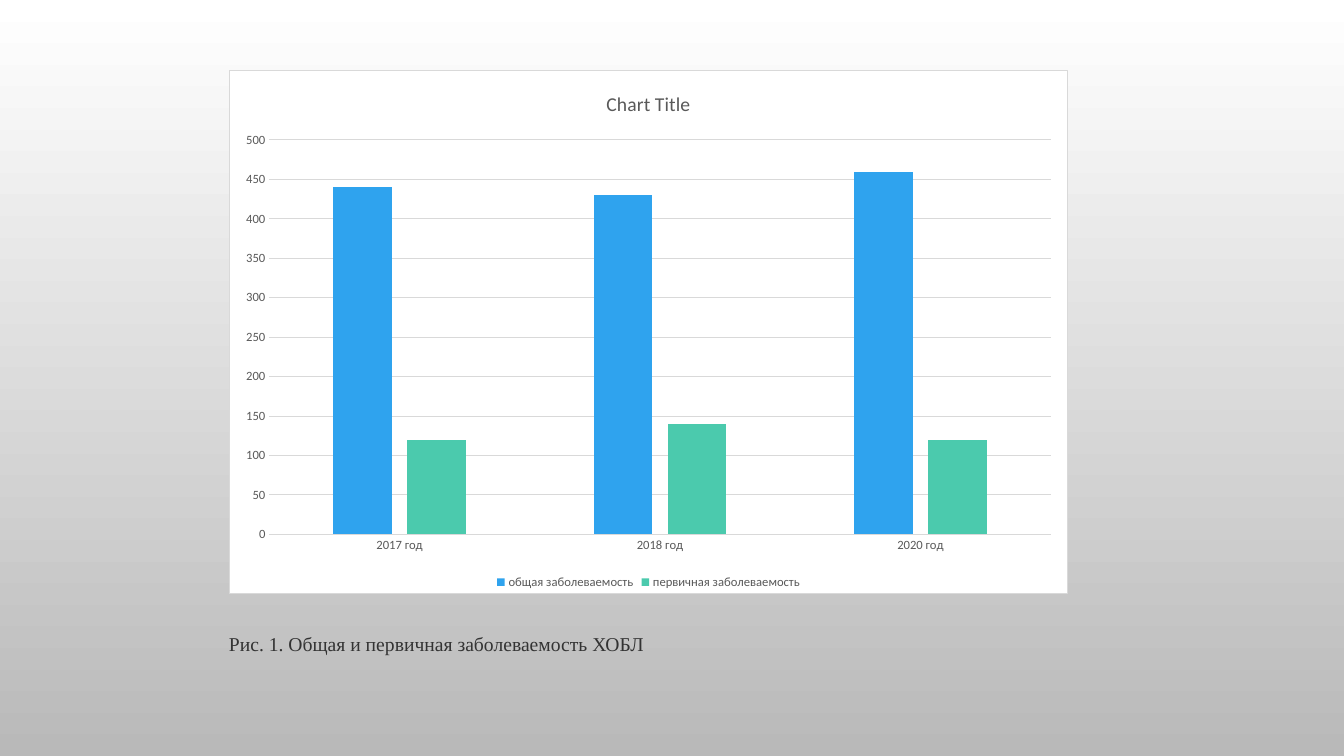
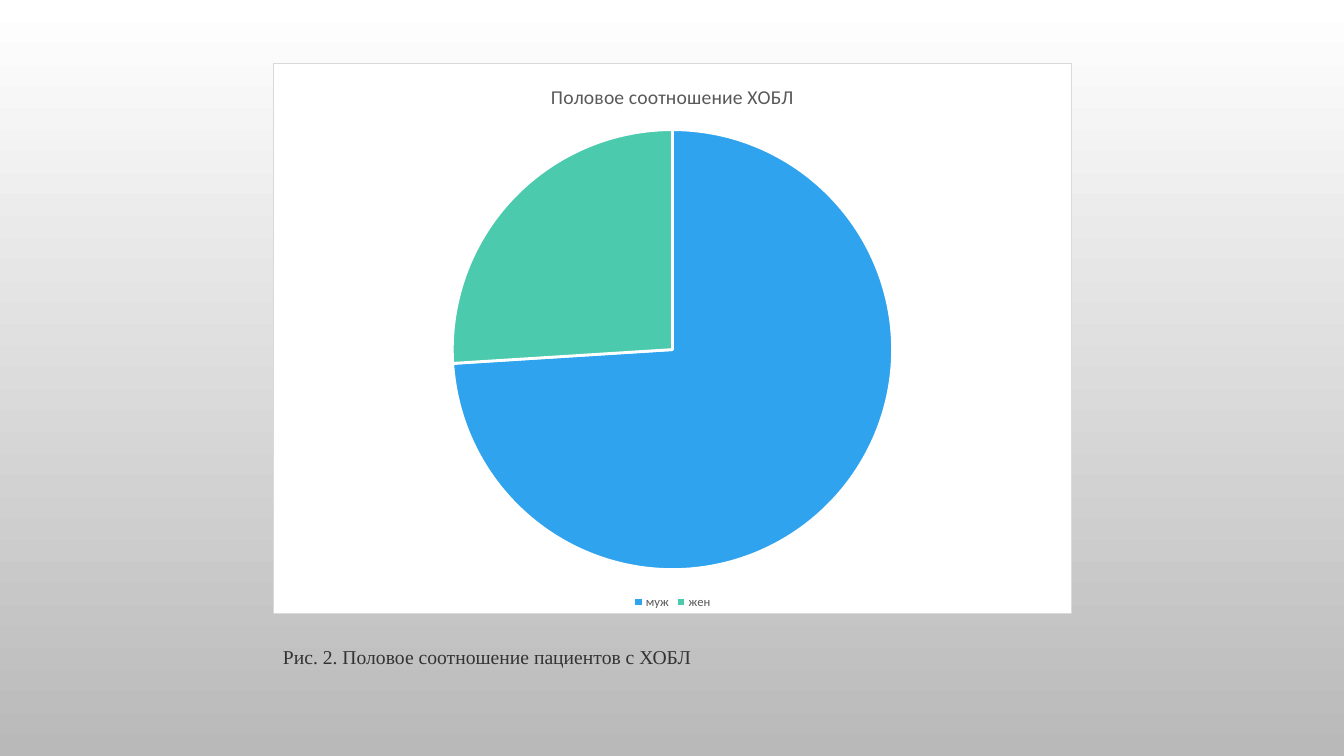
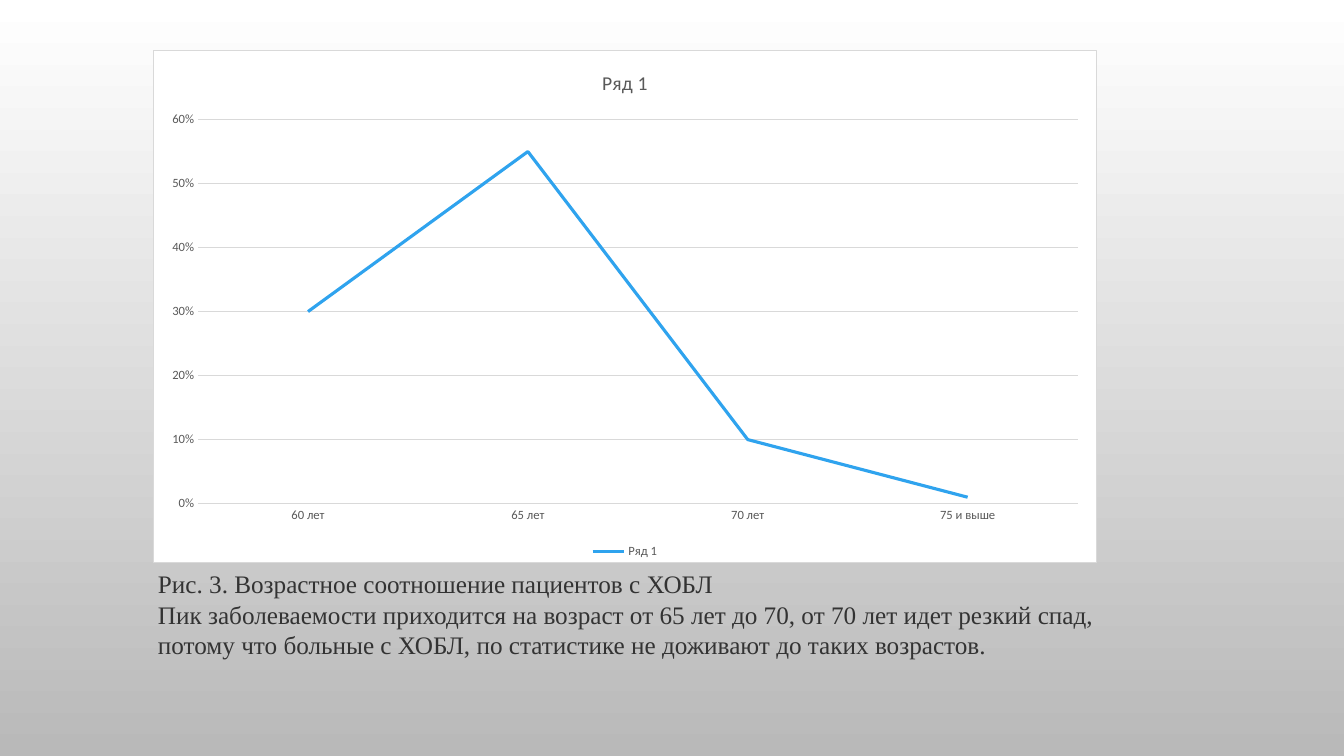
from dataclasses import dataclass

from lxml.etree import SubElement
from pptx import Presentation
from pptx.chart.chart import Chart
from pptx.chart.data import CategoryChartData
from pptx.dml.color import RGBColor
from pptx.enum.chart import XL_CHART_TYPE, XL_LEGEND_POSITION, XL_MARKER_STYLE, XL_TICK_MARK
from pptx.enum.text import MSO_ANCHOR, PP_ALIGN
from pptx.oxml.ns import qn
from pptx.util import Pt

SCALE = 12192000 / 1344
COLORS = {
    "top": "FFFFFF", "base": "B9B9B9", "panel": "FFFFFF", "rule": "D9D9D9",
    "label": "595959", "text": "333333", "blue": "2FA3EE", "green": "4BCAAD",
}
HUES = ("blue", "green")


@dataclass
class Plot:
    kind: XL_CHART_TYPE
    box: tuple[int, int, int, int]
    title: str
    cats: list[str]
    rows: dict[str, list[float]]
    top: float = 0
    step: float = 0
    form: str = "General"


@dataclass
class Note:
    box: tuple[int, int, int, int]
    lines: list[str]
    size: int = 14
    indent: int = 0


PAGES = [
    (Plot(XL_CHART_TYPE.COLUMN_CLUSTERED, (229, 70, 839, 524), "Chart Title",
          ["2017 год", "2018 год", "2020 год"],
          {"общая заболеваемость": [440, 430, 460],
           "первичная заболеваемость": [120, 140, 120]}, 500, 50),
     Note((219, 624, 800, 40), ["Рис. 1. Общая и первичная заболеваемость ХОБЛ"])),
    (Plot(XL_CHART_TYPE.PIE, (273, 63, 799, 551), "Половое соотношение ХОБЛ",
          ["муж", "жен"], {"Половое соотношение ХОБЛ": [74, 26]}),
     Note((273, 637, 800, 40), ["Рис. 2. Половое соотношение пациентов с ХОБЛ"])),
    (Plot(XL_CHART_TYPE.LINE, (153, 50, 944, 513), "Ряд 1",
          ["60 лет", "65 лет", "70 лет", "75 и выше"],
          {"Ряд 1": [0.3, 0.55, 0.1, 0.01]}, 0.6, 0.1, "0%"),
     Note((89, 563, 1032, 102),
          ["Рис. 3. Возрастное соотношение пациентов с ХОБЛ",
           "Пик заболеваемости приходится на возраст от 65 лет до 70, от 70 лет идет резкий спад,",
           "потому что больные с ХОБЛ, по статистике не доживают до таких возрастов."], 18, 59)),
]


def px(num: int) -> int:
    return round(num * SCALE)


def rgb(name: str) -> RGBColor:
    return RGBColor.from_string(COLORS[name])


def style(font, size: int, name: str, face: str = "Calibri") -> None:
    font.size, font.name, font.bold = Pt(size), face, False
    font.color.rgb = rgb(name)


def rule(line, name: str = "rule", width: float = 0.75) -> None:
    line.color.rgb = rgb(name)
    line.width = Pt(width)


def frame(chart: Chart) -> None:
    """Give the chart area its fill and border."""
    props = SubElement(chart.element, qn("c:spPr"))
    chart.element.find(qn("c:chart")).addnext(props)

    def flood(home, name: str) -> None:
        fill = SubElement(home, qn("a:solidFill"))
        SubElement(fill, qn("a:srgbClr"), val=COLORS[name])

    flood(props, "panel")
    flood(SubElement(props, qn("a:ln"), w=str(Pt(0.75))), "rule")


def set_axes(chart: Chart, plot: Plot) -> None:
    cat, val = chart.category_axis, chart.value_axis
    for axis in (cat, val):
        axis.major_tick_mark = axis.minor_tick_mark = XL_TICK_MARK.NONE
        style(axis.tick_labels.font, 9, "label")
    cat.has_major_gridlines = False
    rule(cat.format.line)
    val.format.line.fill.background()
    val.has_major_gridlines = True
    rule(val.major_gridlines.format.line)
    val.minimum_scale, val.maximum_scale, val.major_unit = 0, plot.top, plot.step
    val.tick_labels.number_format = plot.form
    val.tick_labels.number_format_is_linked = False


def paint(chart: Chart, plot: Plot) -> None:
    """Colour the bars, slices or line."""
    group = chart.plots[0]
    pie = plot.kind == XL_CHART_TYPE.PIE
    group.vary_by_categories = pie
    if pie:
        for num, hue in enumerate(HUES):
            slot = group.series[0].points[num].format
            slot.fill.solid()
            slot.fill.fore_color.rgb = rgb(hue)
            rule(slot.line, "panel", 2)
        return
    set_axes(chart, plot)
    if plot.kind == XL_CHART_TYPE.COLUMN_CLUSTERED:
        group.gap_width, group.overlap = 219, -27
    for row, hue in zip(group.series, HUES):
        if plot.kind == XL_CHART_TYPE.LINE:
            row.smooth = False
            row.marker.style = XL_MARKER_STYLE.NONE
            rule(row.format.line, hue, 2.25)
        else:
            row.format.fill.solid()
            row.format.fill.fore_color.rgb = rgb(hue)


def add_plot(slide, plot: Plot) -> None:
    data = CategoryChartData(number_format=plot.form)
    data.categories = plot.cats
    for name, vals in plot.rows.items():
        data.add_series(name, vals)
    chart = slide.shapes.add_chart(plot.kind, *map(px, plot.box), data).chart
    style(chart.font, 10, "label")
    frame(chart)
    # Title and legend
    chart.has_title = True
    title = chart.chart_title.text_frame
    title.text = plot.title
    style(title.paragraphs[0].font, 14, "label")
    chart.has_legend = True
    chart.legend.position = XL_LEGEND_POSITION.BOTTOM
    chart.legend.include_in_layout = False
    style(chart.legend.font, 9, "label")
    paint(chart, plot)


def add_note(slide, note: Note) -> None:
    text = slide.shapes.add_textbox(*map(px, note.box)).text_frame
    text.word_wrap = True
    text.vertical_anchor = MSO_ANCHOR.MIDDLE
    text.text = "\n".join(note.lines)
    for para in text.paragraphs:
        para.alignment = PP_ALIGN.JUSTIFY
        if note.indent:
            para._p.get_or_add_pPr().set("indent", str(px(note.indent)))
        style(para.font, note.size, "text", "Times New Roman")


def main() -> None:
    deck = Presentation()
    deck.slide_width, deck.slide_height = px(1344), px(756)
    # Shared background
    fill = deck.slide_master.background.fill
    fill.gradient()
    fill.gradient_angle = 270
    for stop, name, place in zip(fill.gradient_stops, ("top", "base"), (0, 1)):
        stop.color.rgb = rgb(name)
        stop.position = place
    # Slides without titles
    for plot, note in PAGES:
        slide = deck.slides.add_slide(deck.slide_layouts[6])
        add_plot(slide, plot)
        add_note(slide, note)
    deck.save("out.pptx")


if __name__ == "__main__":
    main()
